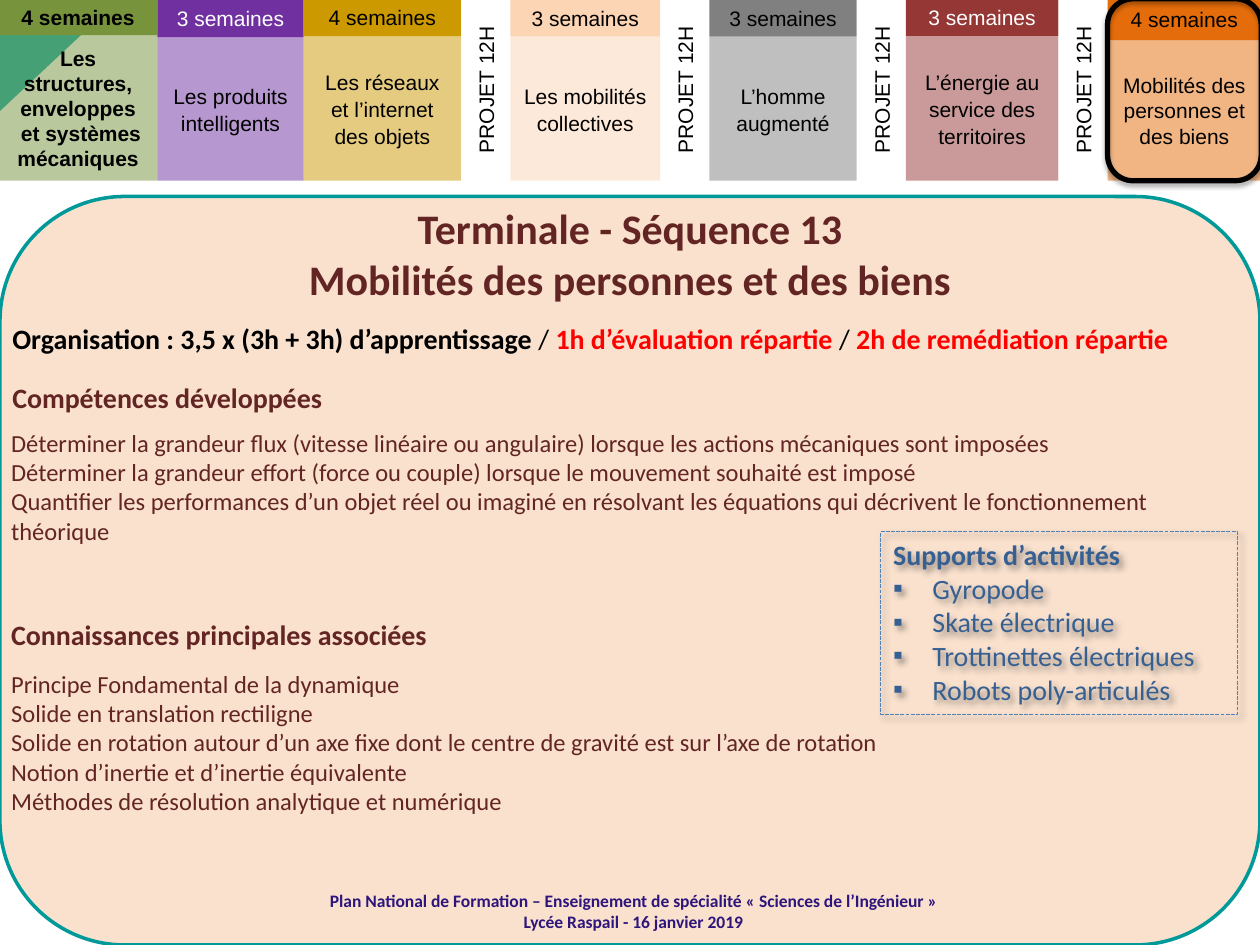
"""Build the slide presenting sequence 13 of the final-year engineering course."""
from lxml.etree import SubElement
from pptx import Presentation
from pptx.dml.color import RGBColor
from pptx.enum.dml import MSO_LINE
from pptx.enum.shapes import MSO_SHAPE as Preset
from pptx.enum.text import MSO_ANCHOR as Anchor, MSO_AUTO_SIZE as AutoSize, PP_ALIGN as Align
from pptx.oxml.ns import qn
from pptx.util import Pt

BLACK = RGBColor(0x00, 0x00, 0x00)
WHITE = RGBColor(0xFF, 0xFF, 0xFF)
RED = RGBColor(0xFF, 0x00, 0x00)
BROWN = RGBColor(0x63, 0x25, 0x23)
NAVY = RGBColor(0x00, 0x00, 0x99)
TEAL = RGBColor(0x00, 0x99, 0x99)
CORNER_TEAL = RGBColor(0x16, 0xAE, 0xB2)
BLUE = RGBColor(0x37, 0x60, 0x92)
EDGE_BLUE = RGBColor(0x4F, 0x81, 0xBD)
GREEN = RGBColor(0x77, 0x93, 0x3C)
PURPLE = RGBColor(0x70, 0x30, 0xA0)
GOLD = RGBColor(0xCC, 0x99, 0x00)
PEACH = RGBColor(0xFC, 0xD5, 0xB5)
GREY = RGBColor(0x80, 0x80, 0x80)
MAROON = RGBColor(0x95, 0x37, 0x35)
ORANGE = RGBColor(0xE4, 0x6C, 0x0A)

BAND_LEFT, BAND_TOP, BAND_BOTTOM = -0.7, -0.7, 103.3
PROJECT = "PROJET 12H"
PROJECT_WIDTH = 28.1
SEQUENCES = [
    (90.7, 20.2, GREEN, BLACK, "4 semaines",
     ["Les structures, enveloppes", " et systèmes mécaniques"], 1, False),
    (83.5, 21.2, PURPLE, WHITE, "3 semaines", ["Les produits intelligents"], 1.07, False),
    (90, 20.8, GOLD, BLACK, "4 semaines", ["Les réseaux et l’internet des objets"], 1.07, True),
    (85.7, 21, PEACH, BLACK, "3 semaines", ["Les mobilités collectives"], 1.07, True),
    (84.2, 21, GREY, BLACK, "3 semaines", ["L’homme augmenté"], 1.07, True),
    (87.1, 20.6, MAROON, WHITE, "3 semaines", ["L’énergie au service des territoires"], 1.07, True),
    (87.8, 23, ORANGE, BLACK, "4 semaines", ["Mobilités des personnes et des biens"], 1, False),
]

TITLE = ["Terminale - Séquence 13", "Mobilités des personnes et des biens"]
ORGANISATION = [
    ("Organisation : 3,5 x (3h + 3h) d’apprentissage ", BLACK, True),
    ("/ ", BLACK, False),
    ("1h d’évaluation répartie ", RED, True),
    ("/ ", BLACK, False),
    ("2h de remédiation répartie", RED, True),
]
SECTIONS = [
    ("Compétences développées", 0, 213.8, 240.5, 74.9, [
        "Déterminer la grandeur flux (vitesse linéaire ou angulaire) lorsque les actions mécaniques sont imposées",
        "Déterminer la grandeur effort (force ou couple) lorsque le mouvement souhaité est imposé",
        "Quantifier les performances d’un objet réel ou imaginé en résolvant les équations qui décrivent "
        "le fonctionnement théorique",
    ]),
    ("Connaissances principales associées", -0.7, 349.2, 378, 92.2, [
        "Principe Fondamental de la dynamique",
        "Solide en translation rectiligne",
        "Solide en rotation autour d’un axe fixe dont le centre de gravité est sur l’axe de rotation",
        "Notion d’inertie et d’inertie équivalente",
        "Méthodes de résolution analytique et numérique",
    ]),
]
SUPPORTS_HEADING = "Supports d’activités"
SUPPORTS = ["Gyropode", "Skate électrique", "Trottinettes électriques", "Robots poly-articulés"]
FOOTER = [
    "Plan National de Formation – Enseignement de spécialité « Sciences de l’Ingénieur »",
    "Lycée Raspail - 16 janvier 2019",
]


def style(font, size, color, bold=False, name="Calibri"):
    font.name, font.size, font.bold = name, Pt(size), bold
    font.color.rgb = color


def write(frame, lines, size, color, bold=False, name="Calibri", align=Align.LEFT,
          anchor=Anchor.TOP, spacing=None):
    frame.word_wrap = True
    frame.auto_size = AutoSize.NONE
    frame.vertical_anchor = anchor
    for index, line in enumerate(lines):
        paragraph = frame.add_paragraph() if index else frame.paragraphs[0]
        paragraph.text = line
        paragraph.alignment = align
        paragraph.line_spacing = spacing
        style(paragraph.font, size, color, bold, name)


def add_text(slide, box, lines, size, color, **options):
    frame = slide.shapes.add_textbox(*map(Pt, box)).text_frame
    write(frame, lines, size, color, **options)
    return frame


def add_block(slide, preset, box, fill=None, opacity=100, edge=None, weight=1):
    block = slide.shapes.add_shape(preset, *map(Pt, box))
    block.shadow.inherit = False
    if fill is None:
        block.fill.background()
    else:
        block.fill.solid()
        block.fill.fore_color.rgb = fill
        if opacity < 100:
            color = block._element.spPr.find(qn("a:solidFill"))[0]
            SubElement(color, qn("a:alpha"), val=str(opacity * 1000))
    if edge is None:
        block.line.fill.background()
    else:
        block.line.color.rgb = edge
        block.line.width = Pt(weight)
    return block


def cast_shadow(block, opacity, blur, distance, angle):
    effects = block._element.spPr.find(qn("a:effectLst"))
    shadow = SubElement(effects, qn("a:outerShdw"), blurRad=str(Pt(blur)), dist=str(Pt(distance)),
                        dir=str(angle * 60000), rotWithShape="0")
    color = SubElement(shadow, qn("a:srgbClr"), val=str(BLACK))
    SubElement(color, qn("a:alpha"), val=str(opacity * 1000))


def add_band(slide):
    label = dict(name="Arial", align=Align.CENTER, anchor=Anchor.MIDDLE)
    height = BAND_BOTTOM - BAND_TOP
    left = BAND_LEFT
    for width, split, color, ink, weeks, theme, spacing, project_follows in SEQUENCES:
        bold = color == GREEN
        head = add_block(slide, Preset.RECTANGLE, (left, BAND_TOP, width, split - BAND_TOP), color)
        write(head.text_frame, [weeks], 12, ink, bold, **label)
        body = add_block(slide, Preset.RECTANGLE, (left, split, width, BAND_BOTTOM - split), color, 50)
        write(body.text_frame, theme, 12, BLACK, bold, spacing=spacing, **label)
        last_box = (left, BAND_TOP, width, height)
        left += width
        if project_follows:
            project = add_block(slide, Preset.RECTANGLE, (left, BAND_TOP, PROJECT_WIDTH, height), WHITE, 50)
            write(project.text_frame, [PROJECT], 12, BLACK, **label)
            project.text_frame._txBody.bodyPr.set("vert", "vert270")
            left += PROJECT_WIDTH
    return last_box


def add_supports(slide):
    box = add_block(slide, Preset.RECTANGLE, (503.3, 303.8, 203.8, 104.4), edge=EDGE_BLUE, weight=0.75)
    box.line.dash_style = MSO_LINE.SQUARE_DOT
    cast_shadow(box, 40, 4, 3, 45)
    write(box.text_frame, [SUPPORTS_HEADING], 16, BLUE, True)
    for support in SUPPORTS:
        paragraph = box.text_frame.add_paragraph()
        paragraph.text = support
        paragraph.alignment = Align.LEFT
        properties = paragraph._p.get_or_add_pPr()
        properties.set("marL", str(Pt(22.5)))
        properties.set("indent", str(-Pt(22.5)))
        SubElement(properties, qn("a:buFont"), typeface="Arial")
        SubElement(properties, qn("a:buChar"), char="▪")
        style(paragraph.font, 16, BLUE)


def main():
    deck = Presentation()
    deck.slide_width, deck.slide_height = Pt(720), Pt(540)
    slide = deck.slides.add_slide(deck.slide_layouts[5])

    corner = add_block(slide, Preset.ISOSCELES_TRIANGLE, (0, 0, 67.7, 63.4), CORNER_TEAL)
    corner.adjustments[0] = 1
    corner.rotation = 180
    footer = add_text(slide, (171.4, 506.2, 380.9, 28.8), FOOTER, 10, NAVY, bold=True,
                      align=Align.CENTER, anchor=Anchor.MIDDLE)
    footer.margin_left = footer.margin_right = footer.margin_top = footer.margin_bottom = 0

    current_sequence = add_band(slide)
    add_block(slide, Preset.ROUNDED_RECTANGLE, (0, 112.3, 720, 427.7), ORANGE, 20, TEAL, 2)

    title = slide.shapes.title
    title.left, title.top, title.width, title.height = map(Pt, (0, 112.3, 720, 65.5))
    write(title.text_frame, TITLE, 24, BROWN, True, align=Align.CENTER)
    slide.shapes._spTree.append(title._element)

    organisation = add_text(slide, (0, 180, 720, 26.6), [""], 16, BLACK, anchor=Anchor.MIDDLE)
    for words, color, bold in ORGANISATION:
        run = organisation.paragraphs[0].add_run()
        run.text = words
        run.font.bold = bold
        run.font.color.rgb = color

    for heading, left, heading_top, top, height, lines in SECTIONS:
        add_text(slide, (left, heading_top, 720, 26.6), [heading], 16, BROWN, bold=True)
        add_text(slide, (-0.7, top, 720, height), lines, 14, BROWN, anchor=Anchor.MIDDLE)

    highlight = add_block(slide, Preset.ROUNDED_RECTANGLE, current_sequence, edge=BLACK, weight=3)
    cast_shadow(highlight, 35, 3.1, 1.8, 90)
    add_supports(slide)
    deck.save("out.pptx")


if __name__ == "__main__":
    main()
